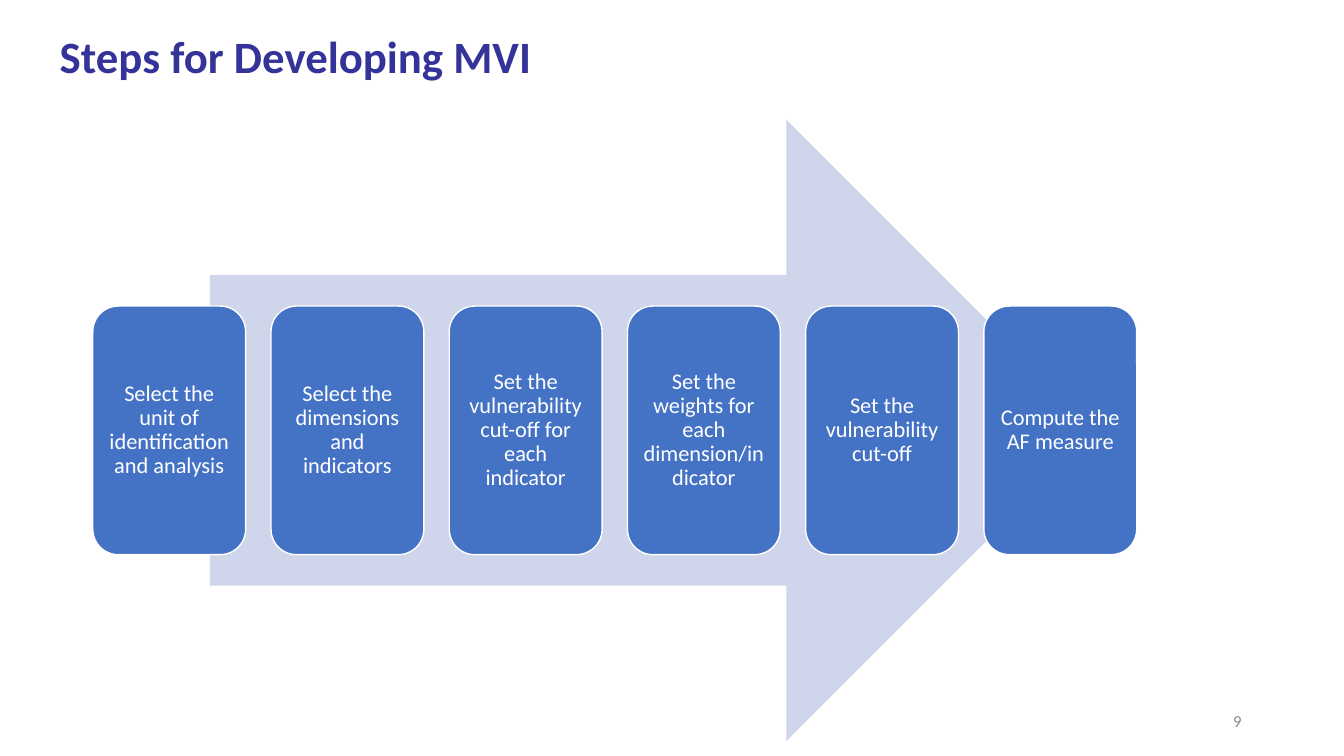
from dataclasses import dataclass

from pptx import Presentation
from pptx.dml.color import RGBColor as Rgb
from pptx.enum.shapes import MSO_SHAPE as Shape
from pptx.enum.text import MSO_ANCHOR as Anchor, PP_ALIGN as Align
from pptx.util import Pt


@dataclass(frozen=True)
class Theme:
    """Colours, font and type sizes of the slide."""
    title: Rgb = Rgb(0x33, 0x33, 0x99)
    arrow: Rgb = Rgb(0xCF, 0xD5, 0xEA)
    card: Rgb = Rgb(0x44, 0x72, 0xC4)
    white: Rgb = Rgb(0xFF, 0xFF, 0xFF)
    gray: Rgb = Rgb(0x8C, 0x8C, 0x8C)
    font: str = "Calibri"
    large: int = 32
    body: int = 16
    small: int = 12


THEME = Theme()
STEPS = (
    "Select the unit of identification and analysis",
    "Select the dimensions and indicators",
    "Set the vulnerability cut-off for each indicator",
    "Set the weights for each dimension/indicator",
    "Set the vulnerability cut-off",
    "Compute the AF measure",
)
LEFT, TOP, WIDTH, HEIGHT, PITCH = 66.3, 218.6, 109.2, 177.6, 127.3
INSET = 5.3


def apply(target, values):
    """Set each named value on the target."""
    for name, value in values.items():
        setattr(target, name, value)


def write(shape, text, size, color, align, bold=False):
    """Fill a shape with one formatted paragraph and return it."""
    frame = shape.text_frame
    apply(frame, {"text": text, "word_wrap": True, "vertical_anchor": Anchor.MIDDLE})
    para = frame.paragraphs[0]
    para.alignment = align
    apply(para.font, {"name": THEME.font, "size": Pt(size), "bold": bold})
    para.font.color.rgb = color
    return para


def label(slide, box, text, size, color, align, bold=False):
    """Add a text box."""
    shape = slide.shapes.add_textbox(*map(Pt, box))
    write(shape, text, size, color, align, bold)


def block(slide, kind, box, color):
    """Add a filled shape without outline or shadow."""
    shape = slide.shapes.add_shape(kind, *map(Pt, box))
    shape.shadow.inherit = False
    shape.fill.solid()
    shape.fill.fore_color.rgb = color
    shape.line.fill.background()
    return shape


def card(slide, left, text):
    """Add one step card with its text."""
    shape = block(slide, Shape.ROUNDED_RECTANGLE, (left, TOP, WIDTH, HEIGHT), THEME.card)
    shape.line.color.rgb = THEME.white
    shape.line.width = Pt(1)
    sides = ("left", "right", "top", "bottom")
    apply(shape.text_frame, {f"margin_{side}": Pt(INSET) for side in sides})
    para = write(shape, text, THEME.body, THEME.white, Align.CENTER)
    para.line_spacing = 0.9


def main():
    """Build the slide and save it."""
    deck = Presentation()
    apply(deck, {"slide_width": Pt(960), "slide_height": Pt(540)})
    slide = deck.slides.add_slide(deck.slide_layouts[6])
    label(slide, (678, 500.6, 216, 28.8), "9", THEME.small, THEME.gray, Align.RIGHT)
    block(slide, Shape.RIGHT_ARROW, (150, 85.6, 633.6, 443.6), THEME.arrow)
    for index, text in enumerate(STEPS):
        card(slide, LEFT + index * PITCH, text)
    label(slide, (35.6, 16.8, 800, 46), "Steps for Developing MVI",
          THEME.large, THEME.title, Align.LEFT, True)
    deck.save("out.pptx")


if __name__ == "__main__":
    main()
